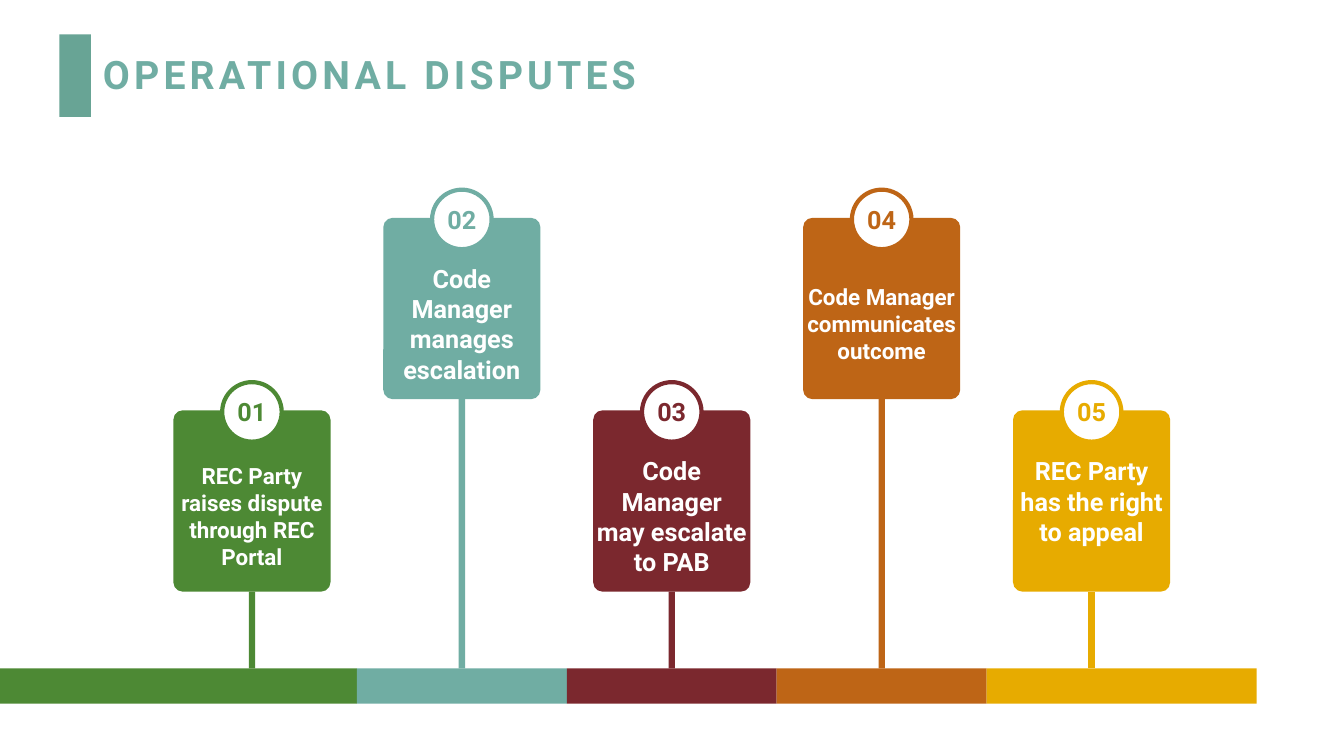
"""Builds the operational disputes timeline slide."""
from dataclasses import dataclass

from lxml import etree
from pptx import Presentation
from pptx.dml.color import RGBColor
from pptx.enum.shapes import MSO_CONNECTOR, MSO_SHAPE
from pptx.enum.text import MSO_ANCHOR, MSO_AUTO_SIZE, PP_ALIGN
from pptx.oxml.ns import qn
from pptx.util import Cm, Pt

RECT, ROUND, OVAL = MSO_SHAPE.RECTANGLE, MSO_SHAPE.ROUNDED_RECTANGLE, MSO_SHAPE.OVAL
LINE = MSO_CONNECTOR.STRAIGHT
MIDDLE, NO_FIT = MSO_ANCHOR.MIDDLE, MSO_AUTO_SIZE.NONE
LEFT, CENTER = PP_ALIGN.LEFT, PP_ALIGN.CENTER
TOP, BOTTOM = 0, 2


@dataclass(frozen=True)
class Theme:
    """Holds colours, font and type sizes."""
    font: str = "Roboto"
    white: str = "FFFFFF"
    mark: str = "68A495"
    title: str = "70ADA3"
    steps: tuple = ("4D8934", "70ADA3", "7B282E", "BE6516", "E7AB00")
    head: int = 28
    large: int = 18
    small: int = 16


THEME = Theme()
PITCH, FIRST = 5.29, 6.35
WIDE, TALL = 3.96, 4.57
HIGH, LOW = 5.49, 10.34
DISC, RISE = 1.5, 0.71
BAR, THICK, END = 16.84, 0.89, 31.67
GAP = 0.76

STEPS = (
    ("REC Party raises dispute through REC Portal", LOW, THEME.small, 0),
    ("Code Manager manages escalation", HIGH, THEME.large, 0),
    ("Code Manager may escalate to PAB", LOW, THEME.large, 0),
    ("Code Manager\vcommunicates\voutcome", HIGH, THEME.small, 0),
    ("REC Party has the right to appeal", LOW, THEME.large, GAP),
)


def apply(item, values):
    """Set each named value on an object."""
    for name, value in values.items():
        setattr(item, name, value)


def write(shape, text, size, color, align=CENTER):
    """Write one bold paragraph in a shape and return it."""
    apply(shape.text_frame, {"text": text, "word_wrap": True,
                             "auto_size": NO_FIT, "vertical_anchor": MIDDLE})
    para = shape.text_frame.paragraphs[0]
    para.alignment = align
    for run in para.runs:
        apply(run.font, {"name": THEME.font, "size": Pt(size), "bold": True})
        run.font.color.rgb = RGBColor.from_string(color)
    return para


def pad(shape, top=0, bottom=0):
    """Set the text margins of a shape."""
    apply(shape.text_frame, {"margin_left": 0, "margin_right": 0,
                             "margin_top": Cm(top), "margin_bottom": Cm(bottom)})


def block(slide, kind, left, top, width, height, color):
    """Add a plain filled shape."""
    shape = slide.shapes.add_shape(kind, Cm(left), Cm(top), Cm(width), Cm(height))
    shape.shadow.inherit = False
    shape.fill.solid()
    shape.fill.fore_color.rgb = RGBColor.from_string(color)
    shape.line.fill.background()
    return shape


def heading(slide, text):
    """Fill the title placeholder beside its marker."""
    block(slide, RECT, 1.5, 0.87, 0.79, 2.08, THEME.mark)
    title = slide.shapes.title
    apply(title, {"left": Cm(2.34), "top": Cm(1.02),
                  "width": Cm(25.78), "height": Cm(1.83)})
    para = write(title, text, THEME.head, THEME.title, LEFT)
    para.line_spacing = 0.9
    for run in para.runs:
        run._r.get_or_add_rPr().set("spc", "300")


def base(slide):
    """Add the coloured bar and return its bands."""
    cuts = [FIRST + PITCH * (i + 0.5) for i in range(len(STEPS) - 1)]
    edges = [0, *cuts, END]
    return [block(slide, RECT, left, BAR, right - left, THICK, color)
            for left, right, color in zip(edges, edges[1:], THEME.steps)]


def badge(slide, mid, top, text, color):
    """Add a numbered disc."""
    disc = block(slide, OVAL, mid - DISC / 2, top, DISC, DISC, THEME.white)
    disc.line.color.rgb = RGBColor.from_string(color)
    disc.line.width = Pt(3)
    pad(disc)
    write(disc, text, THEME.large, color)


def stem(slide, card, band, mid, top, color):
    """Join a card to the bar, gluing to a band centred below it."""
    line = slide.shapes.add_connector(LINE, Cm(mid), Cm(top), Cm(mid), Cm(BAR))
    line.line.color.rgb = RGBColor.from_string(color)
    line.line.width = Pt(4.5)
    etree.SubElement(line._element.spPr, qn("a:effectLst"))
    line.begin_connect(card, BOTTOM)
    if abs(band.left + band.width / 2 - Cm(mid)) < Cm(0.01):
        line.end_connect(band, TOP)


def step(slide, index, band):
    """Add one card with its badge and stem."""
    text, top, size, below = STEPS[index]
    color = THEME.steps[index]
    mid = FIRST + PITCH * index
    card = block(slide, ROUND, mid - WIDE / 2, top, WIDE, TALL, color)
    card.adjustments[0] = 0.06
    pad(card, GAP, below)
    write(card, text, size, THEME.white)
    badge(slide, mid, top - RISE, f"{index + 1:02}", color)
    stem(slide, card, band, mid, top + TALL, color)


def main():
    """Build and save the slide."""
    deck = Presentation()
    apply(deck, {"slide_width": Cm(33.87), "slide_height": Cm(19.05)})
    slide = deck.slides.add_slide(deck.slide_layouts[5])
    heading(slide, "OPERATIONAL DISPUTES")
    for index, band in enumerate(base(slide)):
        step(slide, index, band)
    deck.save("out.pptx")


if __name__ == "__main__":
    main()
